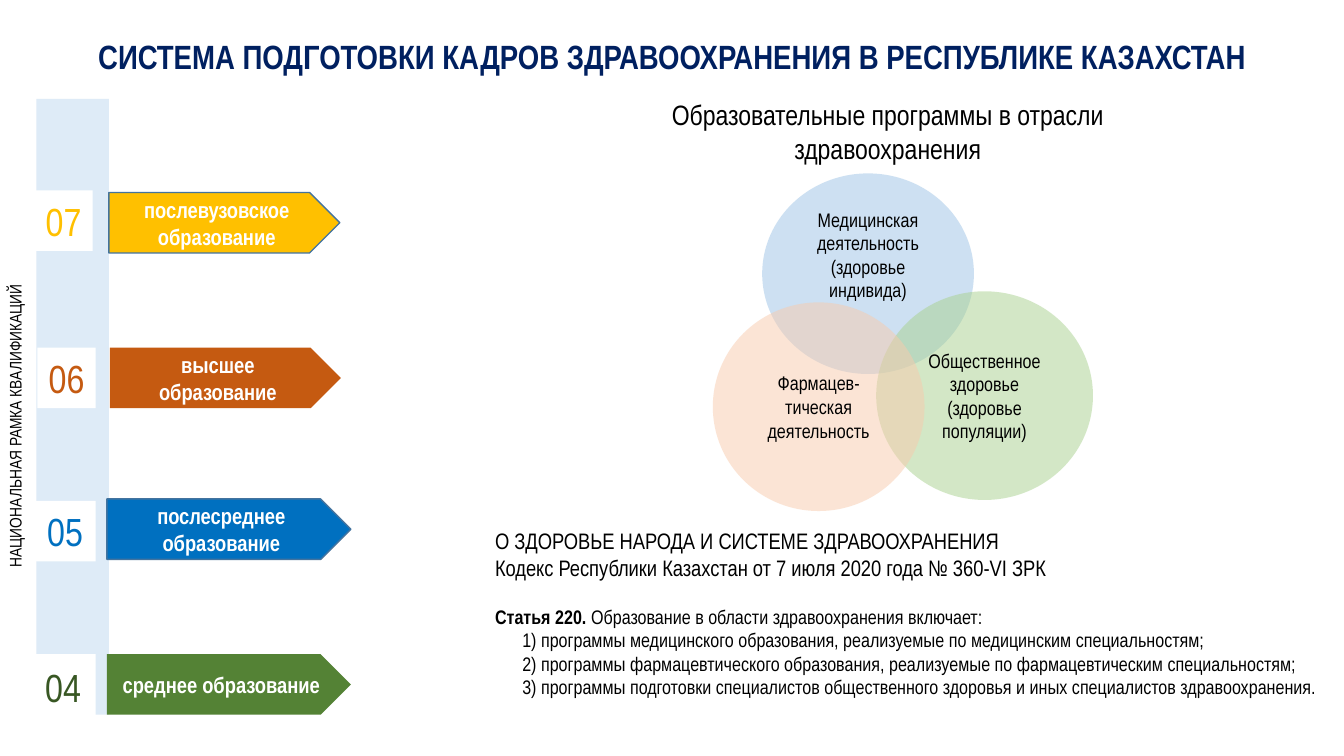
from lxml.etree import SubElement
from pptx import Presentation
from pptx.dml.color import RGBColor
from pptx.enum.shapes import MSO_SHAPE
from pptx.enum.text import MSO_ANCHOR, MSO_AUTO_SIZE, PP_ALIGN
from pptx.oxml.ns import qn
from pptx.util import Inches, Pt

FONT = "Arial Narrow"
NAVY = RGBColor(0x00, 0x20, 0x60)
BLACK = RGBColor(0x00, 0x00, 0x00)
WHITE = RGBColor(0xFF, 0xFF, 0xFF)
PALE_BLUE = RGBColor(0xDE, 0xEB, 0xF7)
OUTLINE_BLUE = RGBColor(0x43, 0x73, 0x9E)
YELLOW = RGBColor(0xFF, 0xC0, 0x00)
ORANGE = RGBColor(0xC5, 0x5A, 0x11)
BLUE = RGBColor(0x00, 0x70, 0xC0)
GREEN = RGBColor(0x54, 0x82, 0x35)
DARK_GREEN = RGBColor(0x38, 0x57, 0x23)
CIRCLE_BLUE = RGBColor(0x9D, 0xC3, 0xE6)
CIRCLE_GREEN = RGBColor(0xA9, 0xD1, 0x8E)
CIRCLE_PEACH = RGBColor(0xF8, 0xCB, 0xAD)

# Level, number box (left, top, width, height), arrow (left, top, width), colours, outline
LEVELS = [
    ("07", "послевузовское образование", (-0.02, 0.91, 0.58, 0.6), (0.72, 0.93, 2.29), YELLOW, YELLOW, True),
    ("06", "высшее образование", (0.01, 2.47, 0.58, 0.6), (0.73, 2.47, 2.29), ORANGE, ORANGE, False),
    ("05", "послесреднее образование", (-0.02, 3.99, 0.61, 0.6), (0.7, 3.97, 2.42), BLUE, BLUE, True),
    ("04", "среднее образование", (-0.06, 5.51, 0.65, 0.64), (0.7, 5.51, 2.42), DARK_GREEN, GREEN, False),
]
# Field of work, circle (left, top, width, height), colour, text anchor
FIELDS = [
    ("Медицинская деятельность (здоровье индивида)", (0.49, 0, 2.1, 1.99), CIRCLE_BLUE, MSO_ANCHOR.TOP),
    ("Общественное здоровье (здоровье популяции)", (1.62, 1.17, 2.15, 2.07), CIRCLE_GREEN, MSO_ANCHOR.MIDDLE),
    ("Фармацев-тическая деятельность", (0, 1.28, 2.1, 2.07), CIRCLE_PEACH, MSO_ANCHOR.MIDDLE),
]
LAW_HEADING = [
    "О ЗДОРОВЬЕ НАРОДА И СИСТЕМЕ ЗДРАВООХРАНЕНИЯ",
    "Кодекс Республики Казахстан от 7 июля 2020 года № 360-VI ЗРК",
]
LAW_ITEMS = [
    "1) программы медицинского образования, реализуемые по медицинским специальностям;",
    "2) программы фармацевтического образования, реализуемые по фармацевтическим специальностям;",
    "3) программы подготовки специалистов общественного здоровья и иных специалистов здравоохранения.",
]


def place(shape, left, top, width, height):
    shape.left, shape.top = Inches(left), Inches(top)
    shape.width, shape.height = Inches(width), Inches(height)


def format_runs(paragraph, size, color, bold=False):
    for run in paragraph.runs:
        run.font.name = FONT
        run.font.size = Pt(size)
        run.font.color.rgb = color
        run.font.bold = bold


def write_centered(shape, text, size, color, bold=False, anchor=MSO_ANCHOR.MIDDLE):
    text_frame = shape.text_frame
    text_frame.word_wrap = True
    text_frame.vertical_anchor = anchor
    text_frame.text = text
    text_frame.paragraphs[0].alignment = PP_ALIGN.CENTER
    format_runs(text_frame.paragraphs[0], size, color, bold)


def add_filled(slide, kind, box, color):
    shape = slide.shapes.add_shape(kind, *map(Inches, box))
    shape.shadow.inherit = False
    shape.fill.solid()
    shape.fill.fore_color.rgb = color
    shape.line.fill.background()
    return shape


def add_title(slide, left, top, width, height):
    title = slide.shapes.title
    place(title, left, top, width, height)
    write_centered(title, "СИСТЕМА ПОДГОТОВКИ КАДРОВ ЗДРАВООХРАНЕНИЯ В РЕСПУБЛИКЕ КАЗАХСТАН", 24, NAVY, True)
    title.text_frame.auto_size = MSO_AUTO_SIZE.NONE
    title.text_frame.paragraphs[0].line_spacing = 0.9


def add_qualification_levels(slide, left, top, height):
    # Vertical band with its rotated caption
    add_filled(slide, MSO_SHAPE.RECTANGLE, (left, top, 0.72, height), PALE_BLUE)
    caption = slide.shapes.add_textbox(Inches(left - 0.36), Inches(top + 0.38), Inches(0.4), Inches(height - 0.38))
    write_centered(caption, "НАЦИОНАЛЬНАЯ РАМКА КВАЛИФИКАЦИЙ", 12, BLACK, anchor=MSO_ANCHOR.TOP)
    caption.text_frame._txBody.bodyPr.set("vert", "vert270")

    # Arrows and level numbers
    for number, name, number_box, arrow_box, number_color, arrow_color, outlined in LEVELS:
        x, y, width = arrow_box
        arrow = add_filled(slide, MSO_SHAPE.PENTAGON, (left + x, top + y, width, 0.6), arrow_color)
        write_centered(arrow, name, 16, WHITE, True)
        if outlined:
            arrow.line.color.rgb = OUTLINE_BLUE
            arrow.line.width = Pt(1)
        x, y, width, box_height = number_box
        square = add_filled(slide, MSO_SHAPE.RECTANGLE, (left + x, top + y, width, box_height), WHITE)
        write_centered(square, number, 28, number_color)


def add_programme_circles(slide, left, top):
    # Heading above the circles
    heading = slide.shapes.add_textbox(Inches(left - 1.13), Inches(top - 0.8), Inches(5.73), Inches(0.88))
    write_centered(heading, "Образовательные программы в отрасли здравоохранения", 20, BLACK, anchor=MSO_ANCHOR.TOP)

    # Overlapping half-transparent circles
    for text, (x, y, width, height), color, anchor in FIELDS:
        circle = add_filled(slide, MSO_SHAPE.OVAL, (left + x, top + y, width, height), color)
        color_element = circle.fill._xPr.find(qn("a:solidFill"))[0]
        SubElement(color_element, qn("a:alpha")).set("val", "50000")
        write_centered(circle, text, 14, BLACK, anchor=anchor)


def add_law_text(slide, left, top, width, height):
    body = slide.placeholders[1]
    place(body, left, top, width, height)
    text_frame = body.text_frame
    text_frame.word_wrap = True
    text_frame.auto_size = MSO_AUTO_SIZE.NONE
    text_frame.vertical_anchor = MSO_ANCHOR.TOP
    article = "Образование в области здравоохранения включает:"
    text_frame.text = "\n".join([*LAW_HEADING, "", *LAW_ITEMS])

    for index, paragraph in enumerate(text_frame.paragraphs):
        if index == len(LAW_HEADING):
            for part in ("Статья 220. ", article):
                paragraph.add_run().text = part
        format_runs(paragraph, 16 if index < len(LAW_HEADING) else 14, BLACK)
        paragraph.alignment = PP_ALIGN.LEFT
        paragraph.space_before = Pt(17 if index == len(LAW_HEADING) else 0)
        properties = paragraph._p.get_or_add_pPr()
        properties.set("marL", str(Inches(0.27) if index > len(LAW_HEADING) else 0))
        properties.set("indent", "0")
        SubElement(properties, qn("a:buNone"))
    text_frame.paragraphs[len(LAW_HEADING)].runs[0].font.bold = True


def main():
    presentation = Presentation()
    presentation.slide_width = Inches(13.33)
    presentation.slide_height = Inches(7.5)
    slide = presentation.slides.add_slide(presentation.slide_layouts[1])
    add_title(slide, 0, 0.02, 13.33, 1.13)
    add_qualification_levels(slide, 0.36, 0.98, 6.11)
    add_programme_circles(slide, 7.07, 1.72)
    add_law_text(slide, 4.81, 5.18, 8.47, 1.82)
    presentation.save("out.pptx")


if __name__ == "__main__":
    main()
